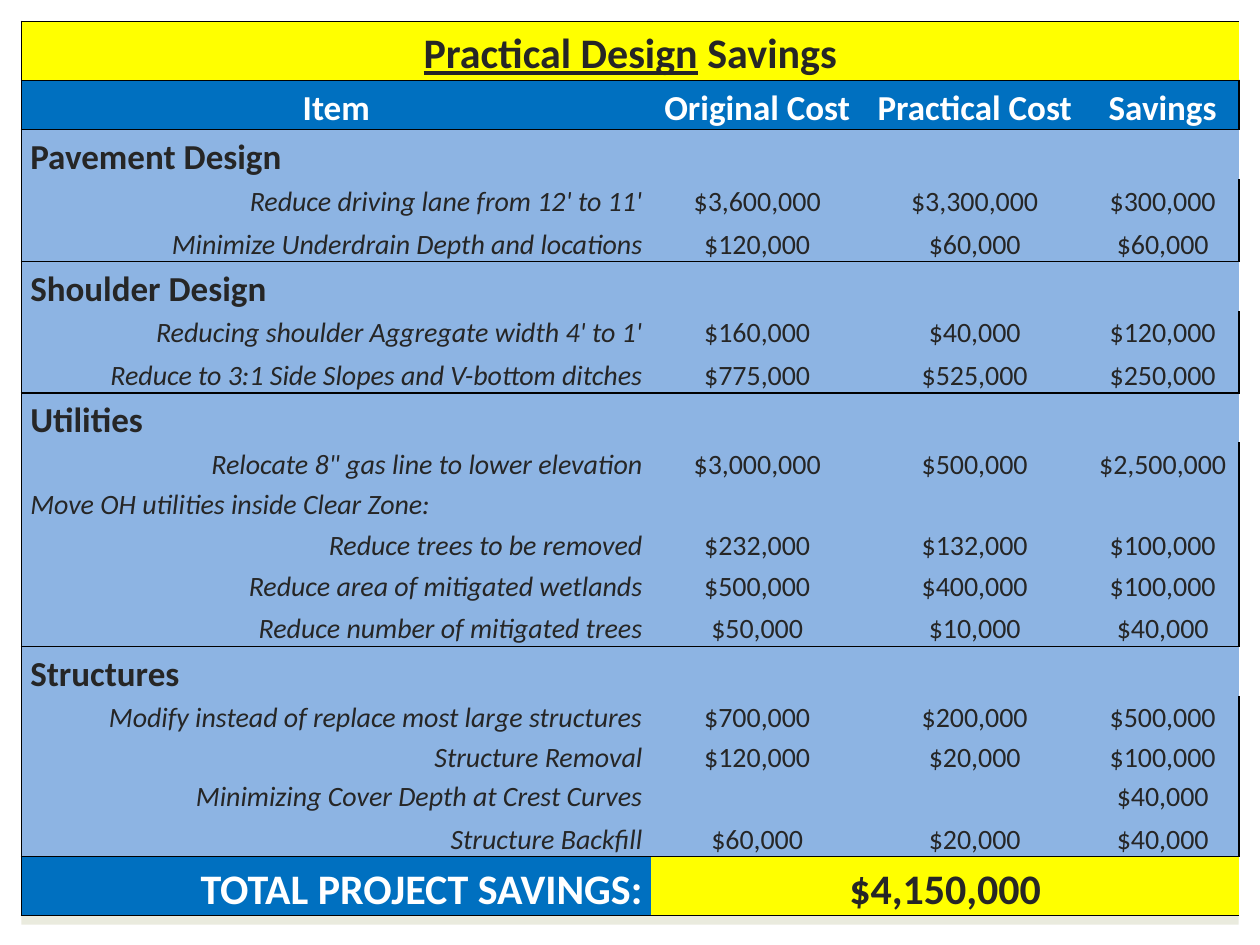
from lxml.etree import SubElement
from pptx import Presentation
from pptx.dml.color import RGBColor
from pptx.enum.shapes import MSO_SHAPE
from pptx.enum.text import MSO_ANCHOR, PP_ALIGN
from pptx.oxml.ns import qn
from pptx.util import Cm, Pt

YELLOW = RGBColor(0xFF, 0xFF, 0x00)
BLUE = RGBColor(0x00, 0x70, 0xC0)
LIGHT_BLUE = RGBColor(0x8D, 0xB4, 0xE3)
BEIGE = RGBColor(0xEA, 0xEB, 0xDE)
DARK = RGBColor(0x26, 0x26, 0x26)
WHITE = RGBColor(0xFF, 0xFF, 0xFF)
BLACK = RGBColor(0x00, 0x00, 0x00)

ROWS = [
    ("title", 1.17, ["Practical Design Savings"]),
    ("header", 0.97, ["Item", "Original Cost", "Practical Cost", "Savings"]),
    ("section", 0.97, ["Pavement Design"]),
    ("item", 0.81, ["Reduce driving lane from 12' to 11'", "$3,600,000", "$3,300,000", "$300,000"]),
    ("item", 0.86, ["Minimize Underdrain Depth and locations", "$120,000", "$60,000", "$60,000"]),
    ("section", 0.97, ["Shoulder Design"]),
    ("item", 0.79, ["Reducing shoulder Aggregate width 4' to 1'", "$160,000", "$40,000", "$120,000"]),
    ("item", 0.86, ["Reduce to 3:1 Side Slopes and V-bottom ditches", "$775,000", "$525,000", "$250,000"]),
    ("section", 0.97, ["Utilities"]),
    ("item", 0.79, ["Relocate 8\" gas line to lower elevation", "$3,000,000", "$500,000", "$2,500,000"]),
    ("group", 0.82, ["Move OH utilities inside Clear Zone:", "", "", ""]),
    ("item", 0.82, ["Reduce trees to be removed", "$232,000", "$132,000", "$100,000"]),
    ("item", 0.82, ["Reduce area of mitigated wetlands", "$500,000", "$400,000", "$100,000"]),
    ("item", 0.86, ["Reduce number of mitigated trees", "$50,000", "$10,000", "$40,000"]),
    ("section", 0.97, ["Structures"]),
    ("item", 0.79, ["Modify instead of replace most large structures", "$700,000", "$200,000", "$500,000"]),
    ("item", 0.79, ["Structure Removal", "$120,000", "$20,000", "$100,000"]),
    ("item", 0.79, ["Minimizing Cover Depth at Crest Curves", "", "", "$40,000"]),
    ("item", 0.86, ["Structure Backfill", "$60,000", "$20,000", "$40,000"]),
    ("total", 1.17, ["TOTAL PROJECT SAVINGS:", "$4,150,000"]),
]
COLUMN_WIDTHS = [12.7, 4.27, 4.5, 3.08]
SIZES = {"title": 24, "header": 20, "section": 20, "item": 16, "group": 16, "total": 24}
FILLS = {"title": YELLOW, "header": BLUE, "total": BLUE}
FIRST_ALIGNMENTS = {
    "title": PP_ALIGN.CENTER,
    "header": PP_ALIGN.CENTER,
    "section": PP_ALIGN.LEFT,
    "item": PP_ALIGN.RIGHT,
    "group": PP_ALIGN.LEFT,
    "total": PP_ALIGN.RIGHT,
}


def set_borders(cell, visible_edges):
    properties = cell._tc.get_or_add_tcPr()
    for edge, visible in visible_edges.items():
        line = SubElement(properties, qn(f"a:ln{edge}"), w=str(Pt(1)))
        if visible:
            fill = SubElement(line, qn("a:solidFill"))
            SubElement(fill, qn("a:srgbClr"), val=str(BLACK))
        else:
            SubElement(line, qn("a:noFill"))


presentation = Presentation()
presentation.slide_width = Cm(25.4)
presentation.slide_height = Cm(19.05)
slide = presentation.slides.add_slide(presentation.slide_layouts[6])

panel = slide.shapes.add_shape(MSO_SHAPE.RECTANGLE, Cm(0.43), Cm(0.43), Cm(24.54), Cm(18.21))
panel.shadow.inherit = False
panel.fill.solid()
panel.fill.fore_color.rgb = BEIGE
panel.line.fill.background()

table_height = sum(height for kind, height, texts in ROWS)
table = slide.shapes.add_table(
    len(ROWS), len(COLUMN_WIDTHS), Cm(0.43), Cm(0.43), Cm(sum(COLUMN_WIDTHS)), Cm(table_height)
).table
table.first_row = False
table.horz_banding = False
for column, width in zip(table.columns, COLUMN_WIDTHS):
    column.width = Cm(width)

last_column = len(COLUMN_WIDTHS) - 1
ruled_tops = {index for index, row in enumerate(ROWS) if row[0] not in ("item", "group")}
ruled_tops.add(len(ROWS))

for row_index, (kind, height, texts) in enumerate(ROWS):
    table.rows[row_index].height = Cm(height)
    for column_index in range(len(COLUMN_WIDTHS)):
        cell = table.cell(row_index, column_index)
        set_borders(cell, {
            "L": column_index == 0,
            "R": column_index == last_column,
            "T": row_index in ruled_tops,
            "B": row_index + 1 in ruled_tops,
        })
        is_total_value = kind == "total" and column_index > 0
        cell.fill.solid()
        cell.fill.fore_color.rgb = YELLOW if is_total_value else FILLS.get(kind, LIGHT_BLUE)
        cell.vertical_anchor = MSO_ANCHOR.BOTTOM
        cell.margin_left = cell.margin_right = Cm(0.18)
        cell.margin_top = cell.margin_bottom = 0

        paragraph = cell.text_frame.paragraphs[0]
        paragraph.alignment = FIRST_ALIGNMENTS[kind] if column_index == 0 else PP_ALIGN.CENTER
        paragraph.line_spacing = 1.15
        paragraph.font.name = "Calibri"
        paragraph.font.size = Pt(SIZES[kind])
        paragraph.font.bold = kind not in ("item", "group")
        paragraph.font.italic = kind in ("item", "group") and column_index == 0
        is_white = kind == "header" or (kind == "total" and column_index == 0)
        paragraph.font.color.rgb = WHITE if is_white else DARK
        if kind == "title" and column_index == 0:
            underlined = paragraph.add_run()
            underlined.text = "Practical Design"
            underlined.font.underline = True
            paragraph.add_run().text = " Savings"
        elif column_index < len(texts) and texts[column_index]:
            paragraph.add_run().text = texts[column_index]

    if len(texts) <= last_column:
        table.cell(row_index, len(texts) - 1).merge(table.cell(row_index, last_column))

presentation.save("out.pptx")
